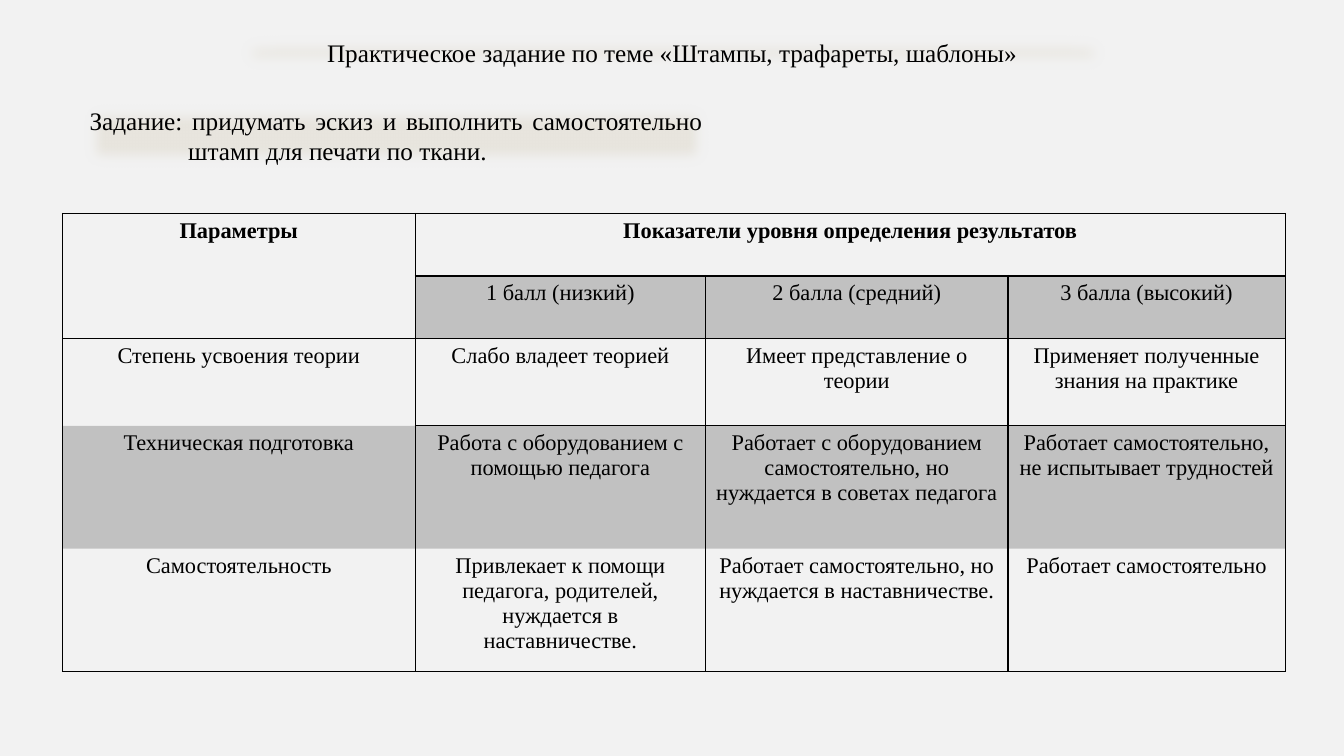
"""Build a slide with a practical assignment and its assessment table."""
from dataclasses import dataclass

from lxml import etree
from pptx import Presentation
from pptx.dml.color import RGBColor
from pptx.enum import shapes, text
from pptx.oxml import ns
from pptx.util import Pt

FONT = "Times New Roman"
BLACK, SAND, SAGE, PAPER = "000000", "E8E5DE", "9CA383", "F2F2F2"
SOFT_EDGE = Pt(10)
SHADE_OPACITY = 20


@dataclass
class Banner:
    left: float
    top: float
    width: float
    height: float
    wording: str
    alignment: text.PP_ALIGN
    hanging: float = 0


BANNERS = [
    Banner(168.5, 23, 623.5, 29, "Практическое задание по теме «Штампы, трафареты, шаблоны»",
           text.PP_ALIGN.CENTER),
    Banner(56.9, 71.3, 452, 51,
           "Задание: придумать эскиз и выполнить самостоятельно штамп для печати по ткани.",
           text.PP_ALIGN.JUSTIFY, 70.5),
]

COLUMN_WIDTHS = [252, 207.4, 216, 198]
ROW_HEIGHTS = [44.6, 44.6, 62.6, 87.8, 87.8]
CRITERIA = [
    ["Параметры", "Показатели уровня определения результатов", "", ""],
    ["", "1 балл (низкий)", "2 балла (средний)", "3 балла (высокий)"],
    ["Степень усвоения теории", "Слабо владеет теорией", "Имеет представление о теории",
     "Применяет полученные знания на практике"],
    ["Техническая подготовка", "Работа с оборудованием с помощью педагога",
     "Работает с оборудованием самостоятельно, но нуждается в советах педагога",
     "Работает самостоятельно, не испытывает трудностей"],
    ["Самостоятельность",
     "Привлекает к помощи педагога, родителей, нуждается в наставничестве.",
     "Работает самостоятельно, но нуждается в наставничестве.", "Работает самостоятельно"],
]


def color(value: str) -> RGBColor:
    return RGBColor.from_string(value)


def style_paragraph(paragraph, size: float, alignment: text.PP_ALIGN, bold: bool = False) -> None:
    paragraph.alignment = alignment
    for run in paragraph.runs:
        run.font.name = FONT
        run.font.size = Pt(size)
        run.font.bold = bold
        run.font.color.rgb = color(BLACK)


def draw_banner(slide, banner: Banner) -> None:
    shape = slide.shapes.add_shape(
        shapes.MSO_SHAPE.RECTANGLE,
        Pt(banner.left), Pt(banner.top), Pt(banner.width), Pt(banner.height))
    shape.shadow.inherit = False
    shape.fill.solid()
    shape.fill.fore_color.rgb = color(SAND)
    shape.line.color.rgb = color(SAGE)
    shape.line.width = Pt(0.5)
    effects = shape._element.spPr.find(ns.qn("a:effectLst"))
    etree.SubElement(effects, ns.qn("a:softEdge"), rad=str(SOFT_EDGE))
    frame = shape.text_frame
    frame.word_wrap = True
    frame.auto_size = text.MSO_AUTO_SIZE.SHAPE_TO_FIT_TEXT
    frame.text = banner.wording
    paragraph = frame.paragraphs[0]
    style_paragraph(paragraph, 18, banner.alignment)
    if banner.hanging:
        properties = paragraph._p.get_or_add_pPr()
        properties.set("marL", str(Pt(banner.hanging)))
        properties.set("indent", str(-Pt(banner.hanging)))


def horizontal_rule(edge: int, column: int) -> float:
    if edge == 1:
        return 1.5 if column else 0
    return 1 if edge in (0, 2, 5) or (edge == 3 and column) else 0


def vertical_rule(edge: int, row: int) -> float:
    return 0 if row == 0 and edge in (2, 3) else 1


def draw_borders(cell, row: int, column: int) -> None:
    widths = {
        "a:lnL": vertical_rule(column, row),
        "a:lnR": vertical_rule(column + cell.span_width if cell.is_merge_origin else column + 1, row),
        "a:lnT": horizontal_rule(row, column),
        "a:lnB": horizontal_rule(row + cell.span_height if cell.is_merge_origin else row + 1, column),
    }
    properties = cell._tc.get_or_add_tcPr()
    for position, (tag, width) in enumerate(widths.items()):
        line = etree.Element(ns.qn(tag), w=str(Pt(width)))
        if width:
            fill = etree.SubElement(line, ns.qn("a:solidFill"))
            etree.SubElement(fill, ns.qn("a:srgbClr"), val=BLACK)
        else:
            etree.SubElement(line, ns.qn("a:noFill"))
        properties.insert(position, line)


def fill_cell(cell, shaded: bool) -> None:
    if not shaded:
        cell.fill.background()
        return
    cell.fill.solid()
    cell.fill.fore_color.rgb = color(BLACK)
    shade = cell._tc.tcPr.find(".//" + ns.qn("a:srgbClr"))
    etree.SubElement(shade, ns.qn("a:alpha"), val=str(SHADE_OPACITY * 1000))


def draw_criteria(slide) -> None:
    table = slide.shapes.add_table(
        len(ROW_HEIGHTS), len(COLUMN_WIDTHS), Pt(44.6), Pt(152.4),
        Pt(sum(COLUMN_WIDTHS)), Pt(sum(ROW_HEIGHTS))).table
    table.first_row = False
    table.horz_banding = False
    for column, width in zip(table.columns, COLUMN_WIDTHS):
        column.width = Pt(width)
    for row, height in zip(table.rows, ROW_HEIGHTS):
        row.height = Pt(height)
    table.cell(0, 0).merge(table.cell(1, 0))
    table.cell(0, 1).merge(table.cell(0, 3))
    for row, wordings in enumerate(CRITERIA):
        for column, wording in enumerate(wordings):
            cell = table.cell(row, column)
            fill_cell(cell, row == 3 or (row == 1 and column > 0))
            draw_borders(cell, row, column)
            if wording:
                cell.text_frame.text = wording
                style_paragraph(cell.text_frame.paragraphs[0], 16, text.PP_ALIGN.CENTER, row == 0)


def main() -> None:
    presentation = Presentation()
    presentation.slide_width = Pt(960)
    presentation.slide_height = Pt(540)
    slide = presentation.slides.add_slide(presentation.slide_layouts[6])
    slide.background.fill.solid()
    slide.background.fill.fore_color.rgb = color(PAPER)
    for banner in BANNERS:
        draw_banner(slide, banner)
    draw_criteria(slide)
    presentation.save("out.pptx")


if __name__ == "__main__":
    main()
